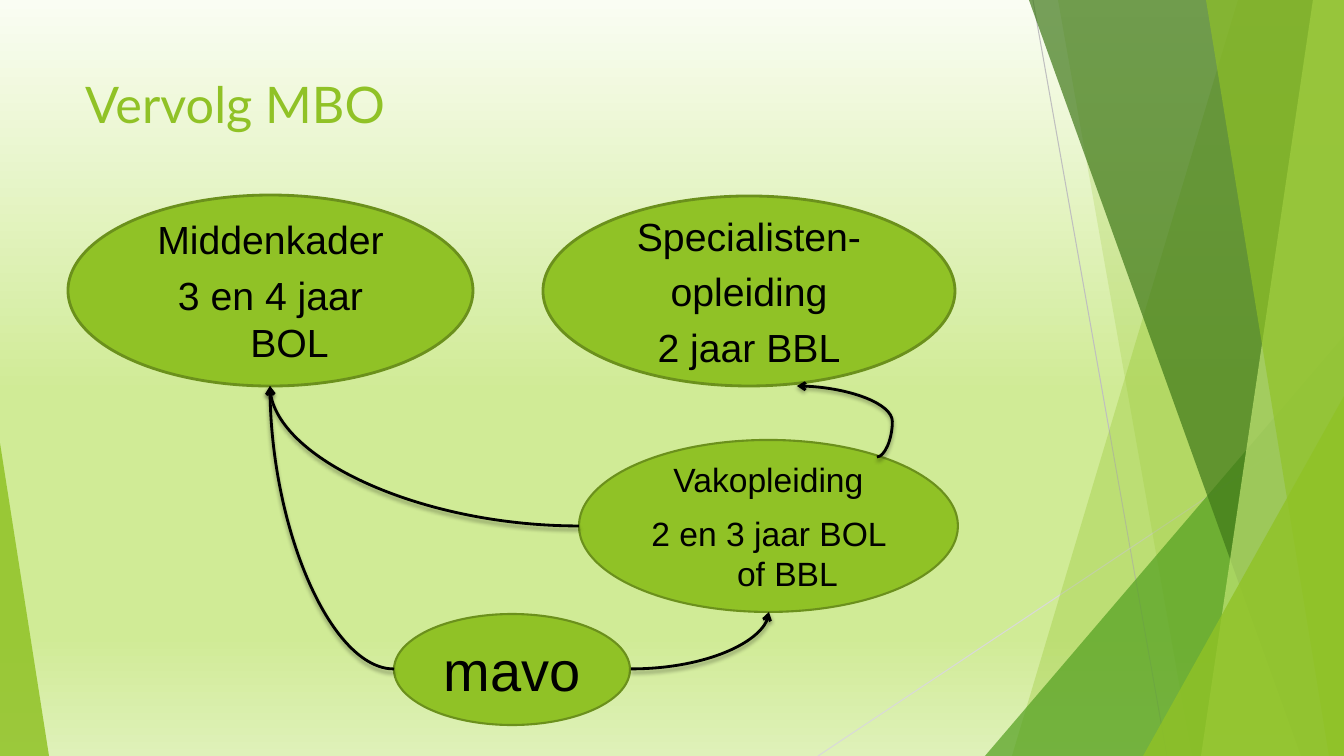
from dataclasses import dataclass

from lxml import etree
from pptx import Presentation
from pptx.dml.color import RGBColor as RGB
from pptx.enum.shapes import MSO_CONNECTOR as CONN, MSO_SHAPE as SHAPE
from pptx.enum.text import MSO_ANCHOR as ANCHOR, MSO_AUTO_SIZE as AUTO, PP_ALIGN as ALIGN
from pptx.oxml import parse_xml
from pptx.oxml.ns import nsdecls, qn
from pptx.util import Inches, Pt

W, H = 1344, 756
PX = Inches(1) / 100.8


@dataclass(frozen=True)
class Theme:
    green: str = "90C226"
    outline: str = "6B901C"
    ink: str = "000000"
    leaf: str = "54A021"
    forest: str = "3F7819"
    lime: str = "C0E474"
    hairlines: tuple = ("BFBFBF", "D9D9D9")
    backdrop: tuple = ((0, "FAFDF3"), (52, "D0EB96"), (84, "D0EB96"), (100, "DFF1B9"))
    title_font: str = "Lato"
    body_font: str = "Arial"
    title: int = 36
    large: int = 40
    medium: int = 28
    small: int = 24


T = Theme()


def px(n):
    return round(n * PX)


def set_all(obj, values):
    for name, value in values.items():
        setattr(obj, name, value)


def place(sp, box):
    set_all(sp, dict(zip(("left", "top", "width", "height"), map(px, box))))


def style_font(font, name, size, colour):
    set_all(font, {"name": name, "size": Pt(size)})
    font.color.rgb = RGB.from_string(colour)


def set_line(line, colour, width):
    line.color.rgb = RGB.from_string(colour)
    line.width = Pt(width)


def paint_backdrop(s):
    fill = s.background.fill
    fill.gradient()
    fill.gradient_angle = 270
    stops = s._element.find(".//" + qn("a:gsLst"))
    for old in list(stops):
        stops.remove(old)
    for pos, colour in T.backdrop:
        gs = etree.SubElement(stops, qn("a:gs"), pos=str(pos * 1000))
        etree.SubElement(gs, qn("a:srgbClr"), val=colour)


def glaze(sp, colour, opacity):
    """Translucent fill without an outline."""
    sp.shadow.inherit = False
    sp.fill.solid()
    sp.fill.fore_color.rgb = RGB.from_string(colour)
    sp.line.fill.background()
    clr = sp._element.spPr.find(".//" + qn("a:srgbClr"))
    etree.SubElement(clr, qn("a:alpha"), val=str(opacity * 1000))


def add_facet(s, top_x, bottom_x, colour, opacity):
    """Panel from a slanted left edge to the right side of the slide."""
    builder = s.shapes.build_freeform(top_x, 0, scale=PX)
    builder.add_line_segments([(W, 0), (W, H), (bottom_x, H)], close=True)
    glaze(builder.convert_to_shape(), colour, opacity)


def add_corner(s, box, apex, colour, opacity):
    sp = s.shapes.add_shape(SHAPE.ISOSCELES_TRIANGLE, *map(px, box))
    sp.adjustments[0] = apex
    glaze(sp, colour, opacity)


def add_hairline(s, ends, colour):
    line = s.shapes.add_connector(CONN.STRAIGHT, *map(px, ends))
    set_line(line.line, colour, 0.75)
    etree.SubElement(line._element.spPr, qn("a:effectLst"))


def style_oval(sp, lines, size, width, before=0, hang=0):
    sp.fill.solid()
    sp.fill.fore_color.rgb = RGB.from_string(T.green)
    set_line(sp.line, T.outline, width)
    sp.shadow.inherit = False
    tf = sp.text_frame
    set_all(tf, {"word_wrap": True, "auto_size": AUTO.NONE, "vertical_anchor": ANCHOR.MIDDLE})
    tf.text = "\n".join(lines)
    for p in tf.paragraphs:
        set_all(p, {"alignment": ALIGN.CENTER, "space_before": Pt(before)})
        pPr = p._p.get_or_add_pPr()
        pPr.set("marL", str(px(hang)))
        pPr.set("indent", str(-px(hang)))
        etree.SubElement(pPr, qn("a:buNone"))
        style_font(p.runs[0].font, T.body_font, size, T.ink)


def add_oval(s, box, *style):
    style_oval(s.shapes.add_shape(SHAPE.OVAL, *map(px, box)), *style)


def fill_body_oval(sp, box, *style):
    place(sp, box)
    sp._element.spPr.append(parse_xml(
        f'<a:prstGeom {nsdecls("a")} prst="ellipse"><a:avLst/></a:prstGeom>'))
    style_oval(sp, *style)


def add_curve(s, ends, bend=None):
    """Curved arrow: a quarter turn, or an S-curve when bend is given."""
    c = s.shapes.add_connector(CONN.CURVE, *map(px, ends))
    set_line(c.line, T.ink, 2)
    spPr = c._element.spPr
    geom = spPr.find(qn("a:prstGeom"))
    if bend is None:
        geom.set("prst", "curvedConnector2")
    else:
        etree.SubElement(geom.find(qn("a:avLst")), qn("a:gd"),
                         name="adj1", fmla=f"val {bend}")
    etree.SubElement(spPr.find(qn("a:ln")), qn("a:tailEnd"), type="arrow")
    spPr.append(parse_xml(
        f'<a:effectLst {nsdecls("a")}><a:outerShdw blurRad="{Pt(3)}" dist="{Pt(2)}" '
        f'dir="5400000" rotWithShape="0"><a:srgbClr val="{T.ink}">'
        '<a:alpha val="35000"/></a:srgbClr></a:outerShdw></a:effectLst>'))


def add_decoration(s):
    add_hairline(s, (1033, 0, 1167, H), T.hairlines[0])
    add_hairline(s, (W, 406, 818, H), T.hairlines[1])
    add_facet(s, 1238, 1012, T.green, 30)
    add_facet(s, 1058, 1192, T.green, 20)
    add_corner(s, (985, 336, 359, 420), 1, T.leaf, 72)
    add_facet(s, 1029, 1301, T.forest, 70)
    add_facet(s, 1313, 1201, T.lime, 70)
    add_facet(s, 1206, 1329, T.green, 65)
    add_corner(s, (1143, 396, 201, 360), 1, T.green, 80)
    add_corner(s, (0, 443, 49, 313), 0, T.green, 85)


def set_title(sp, text):
    place(sp, (75, 68, 948, 145))
    tf = sp.text_frame
    set_all(tf, {"text": text, "auto_size": AUTO.NONE, "vertical_anchor": ANCHOR.TOP})
    p = tf.paragraphs[0]
    p.alignment = ALIGN.LEFT
    style_font(p.runs[0].font, T.title_font, T.title, T.green)


def main():
    prs = Presentation()
    set_all(prs, {"slide_width": px(W), "slide_height": px(H)})
    s = prs.slides.add_slide(prs.slide_layouts[1])
    title, body = s.placeholders

    # Background, with the placeholders in front of it
    paint_backdrop(s)
    add_decoration(s)
    for sp in (title, body):
        s.shapes._spTree.append(sp._element)

    # Title and education levels
    set_title(title, "Vervolg MBO")
    fill_body_oval(body, (579, 440, 379, 172),
                   ("Vakopleiding", "2 en 3 jaar BOL of BBL"), T.small, 1.5, 10, 38)
    add_oval(s, (394, 614, 236, 111), ("mavo",), T.large, 1.5)
    add_oval(s, (68, 195, 405, 191),
             ("Middenkader", "3 en 4 jaar BOL"), T.medium, 2, 6, 38)
    add_oval(s, (543, 196, 412, 190),
             ("Specialisten-", "opleiding", "2 jaar BBL"), T.medium, 2, 6, 38)

    # Routes between the levels
    add_curve(s, (394, 669, 270, 386))
    add_curve(s, (631, 669, 769, 612))
    add_curve(s, (579, 526, 270, 386))
    add_curve(s, (877, 457, 797, 386), bend=-19300)
    prs.save("out.pptx")


if __name__ == "__main__":
    main()
